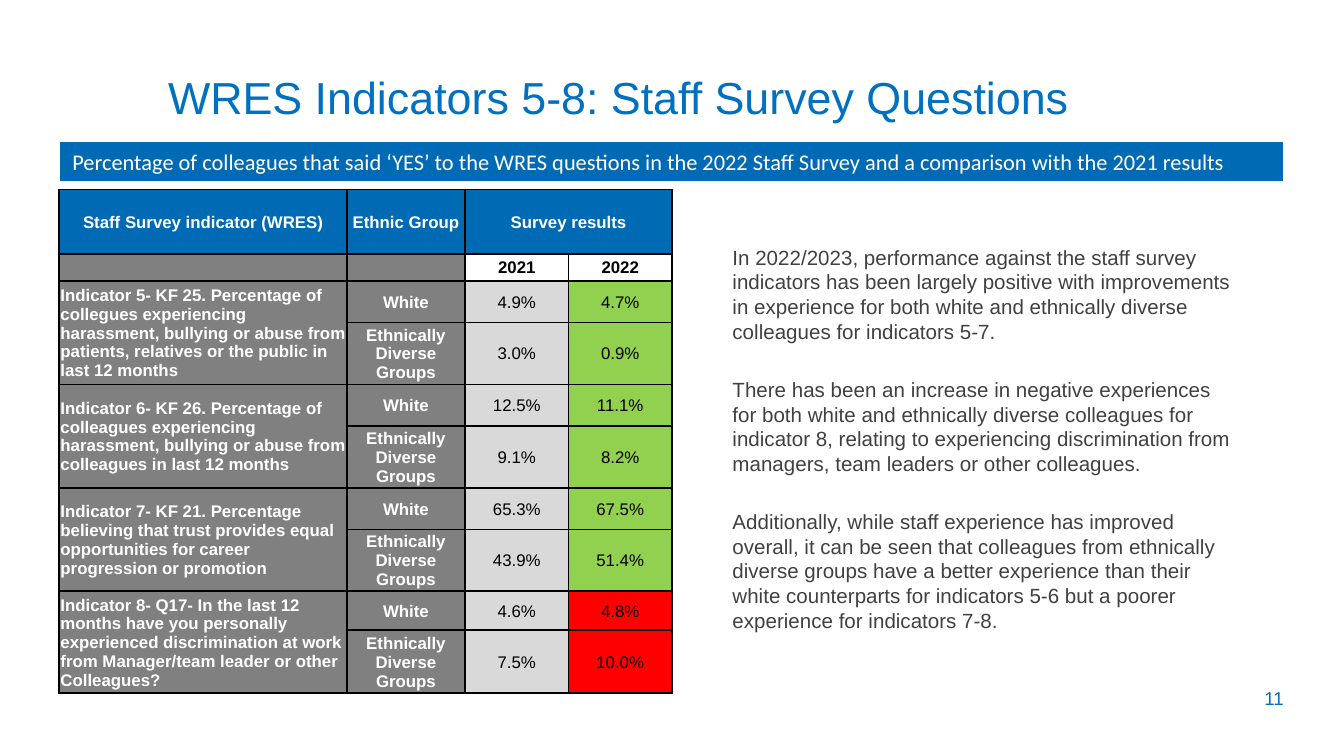
from lxml.etree import SubElement
from pptx import Presentation
from pptx.dml.color import RGBColor
from pptx.enum.shapes import MSO_SHAPE
from pptx.enum.text import MSO_ANCHOR, MSO_AUTO_SIZE, PP_ALIGN
from pptx.oxml import parse_xml
from pptx.oxml.ns import nsdecls, qn
from pptx.util import Inches, Pt

BLUE, BANNER, GREY, LIGHT = "0070C0", "006AB4", "808080", "D9D9D9"
WHITE, BLACK, GREEN, RED, TEXT = "FFFFFF", "000000", "92D050", "FF0000", "404040"

TITLE = "WRES Indicators 5-8: Staff Survey Questions"
SUBTITLE = ("Percentage of colleagues that said ‘YES’ to the WRES questions in the "
            "2022 Staff Survey and a comparison with the 2021 results")
COMMENTS = [
    "In 2022/2023, performance against the staff survey indicators has been largely positive "
    "with improvements in experience for both white and ethnically diverse colleagues for "
    "indicators 5-7.",
    "There has been an increase in negative experiences for both white and ethnically diverse "
    "colleagues for indicator 8, relating to experiencing discrimination from managers, team "
    "leaders or other colleagues.",
    "Additionally, while staff experience has improved overall, it can be seen that colleagues "
    "from ethnically diverse groups have a better experience than their white counterparts for "
    "indicators 5-6 but a poorer experience for indicators 7-8.",
]
HEADERS = ["Staff Survey indicator (WRES)", "Ethnic Group", "Survey results", ""]
YEARS = ["", "", "2021", "2022"]
GROUPS = ["White", "Ethnically Diverse Groups"]
INDICATORS = [
    ("Indicator 5- KF 25. Percentage of collegues experiencing harassment, bullying or abuse "
     "from patients, relatives or the public in last 12 months",
     GREEN, [("4.9%", "4.7%"), ("3.0%", "0.9%")]),
    ("Indicator 6- KF 26. Percentage of colleagues experiencing harassment, bullying or abuse "
     "from colleagues in last 12 months",
     GREEN, [("12.5%", "11.1%"), ("9.1%", "8.2%")]),
    ("Indicator 7- KF 21. Percentage believing that trust provides equal opportunities for "
     "career progression or promotion",
     GREEN, [("65.3%", "67.5%"), ("43.9%", "51.4%")]),
    ("Indicator 8- Q17- In the last 12 months have you personally experienced discrimination at "
     "work from Manager/team leader or other Colleagues?",
     RED, [("4.6%", "4.8%"), ("7.5%", "10.0%")]),
]
COLUMNS = [2.14, 0.88, 0.77, 0.77]
ROWS = [0.48, 0.2] + [0.31, 0.46] * 3 + [0.29, 0.47]


def color(value):
    """Turn a hex string into a colour."""
    return RGBColor.from_string(value)


def write(para, text, size, ink, font="Arial", bold=False, align=PP_ALIGN.LEFT):
    """Fill a paragraph and format its runs."""
    para.text = text
    para.alignment = align
    for span in para.runs:
        span.font.name, span.font.size, span.font.bold = font, Pt(size), bold
        span.font.color.rgb = color(ink)


def place(shape, left, top, width, height):
    """Move and size a shape in inches."""
    shape.left, shape.top = Inches(left), Inches(top)
    shape.width, shape.height = Inches(width), Inches(height)


def style_cell(cell, text, fill, ink=WHITE, bold=True, align=PP_ALIGN.CENTER):
    """Write a table cell with its fill, margins and black borders."""
    para = cell.text_frame.paragraphs[0]
    write(para, text, 9, ink, bold=bold, align=align)
    if not text:
        SubElement(para._p, qn("a:endParaRPr"), sz="900")
    cell.vertical_anchor = MSO_ANCHOR.MIDDLE
    cell.margin_left = cell.margin_top = cell.margin_right = Inches(0.01)
    cell.margin_bottom = 0
    cell.fill.solid()
    cell.fill.fore_color.rgb = color(fill)
    for index, side in enumerate("LRTB"):
        cell._tc.get_or_add_tcPr().insert(index, parse_xml(
            f'<a:ln{side} {nsdecls("a")} w="12700"><a:solidFill><a:srgbClr val="{BLACK}"/>'
            f'</a:solidFill></a:ln{side}>'))


def add_survey_table(page):
    """Build the survey results table."""
    table = page.shapes.add_table(len(ROWS), len(COLUMNS), Inches(0.44), Inches(1.41),
                                  Inches(sum(COLUMNS)), Inches(sum(ROWS))).table
    for column, width in zip(table.columns, COLUMNS):
        column.width = Inches(width)
    for row, height in zip(table.rows, ROWS):
        row.height = Inches(height)
    for column, (header, year) in enumerate(zip(HEADERS, YEARS)):
        style_cell(table.cell(0, column), header, BANNER)
        style_cell(table.cell(1, column), year, WHITE if year else GREY, BLACK)
    table.cell(0, 2).merge(table.cell(0, 3))
    for number, (indicator, rating, results) in enumerate(INDICATORS):
        first = 2 + number * len(GROUPS)
        for offset, (group, (before, after)) in enumerate(zip(GROUPS, results)):
            row = first + offset
            style_cell(table.cell(row, 0), "" if offset else indicator, GREY,
                       align=PP_ALIGN.LEFT)
            style_cell(table.cell(row, 1), group, GREY)
            style_cell(table.cell(row, 2), before, LIGHT, BLACK, False)
            style_cell(table.cell(row, 3), after, rating, BLACK, False)
        table.cell(first, 0).merge(table.cell(first + 1, 0))


def main():
    """Build and save the slide."""
    deck = Presentation()
    deck.slide_width, deck.slide_height = Inches(10), Inches(5.625)
    page = deck.slides.add_slide(deck.slide_layouts[1])

    title, body = page.shapes.title, page.placeholders[1]
    place(title, 1.15, 0.46, 8.4, 0.58)
    write(title.text_frame.paragraphs[0], TITLE, 24, BLUE)
    title.text_frame.vertical_anchor = MSO_ANCHOR.TOP
    title.text_frame.margin_top = Inches(0.06)
    title.text_frame.auto_size = MSO_AUTO_SIZE.NONE

    place(body, 5.35, 1.77, 3.97, 3.04)
    frame = body.text_frame
    frame.auto_size = MSO_AUTO_SIZE.NONE
    frame.text = "\n".join(COMMENTS)
    for index, (para, comment) in enumerate(zip(frame.paragraphs, COMMENTS)):
        write(para, comment, 11, TEXT)
        para.line_spacing = 1.0
        para.space_before = Pt(18 if index else 0)
        properties = para._p.get_or_add_pPr()
        properties.set("marL", "0")
        properties.set("indent", "0")
        SubElement(properties, qn("a:buNone"))

    banner = page.shapes.add_shape(MSO_SHAPE.RECTANGLE, Inches(0.44), Inches(1.05),
                                   Inches(9.11), Inches(0.3))
    banner.shadow.inherit = False
    banner.fill.solid()
    banner.fill.fore_color.rgb = color(BANNER)
    banner.line.color.rgb = color(WHITE)
    banner.line.width = Pt(0.75)
    write(banner.text_frame.paragraphs[0], SUBTITLE, 12, WHITE, "Calibri")

    add_survey_table(page)

    number = page.shapes.add_textbox(Inches(9.28), Inches(5.06), Inches(0.37), Inches(0.27))
    write(number.text_frame.paragraphs[0], "11", 10, BLUE, align=PP_ALIGN.RIGHT)

    deck.save("out.pptx")


if __name__ == "__main__":
    main()
